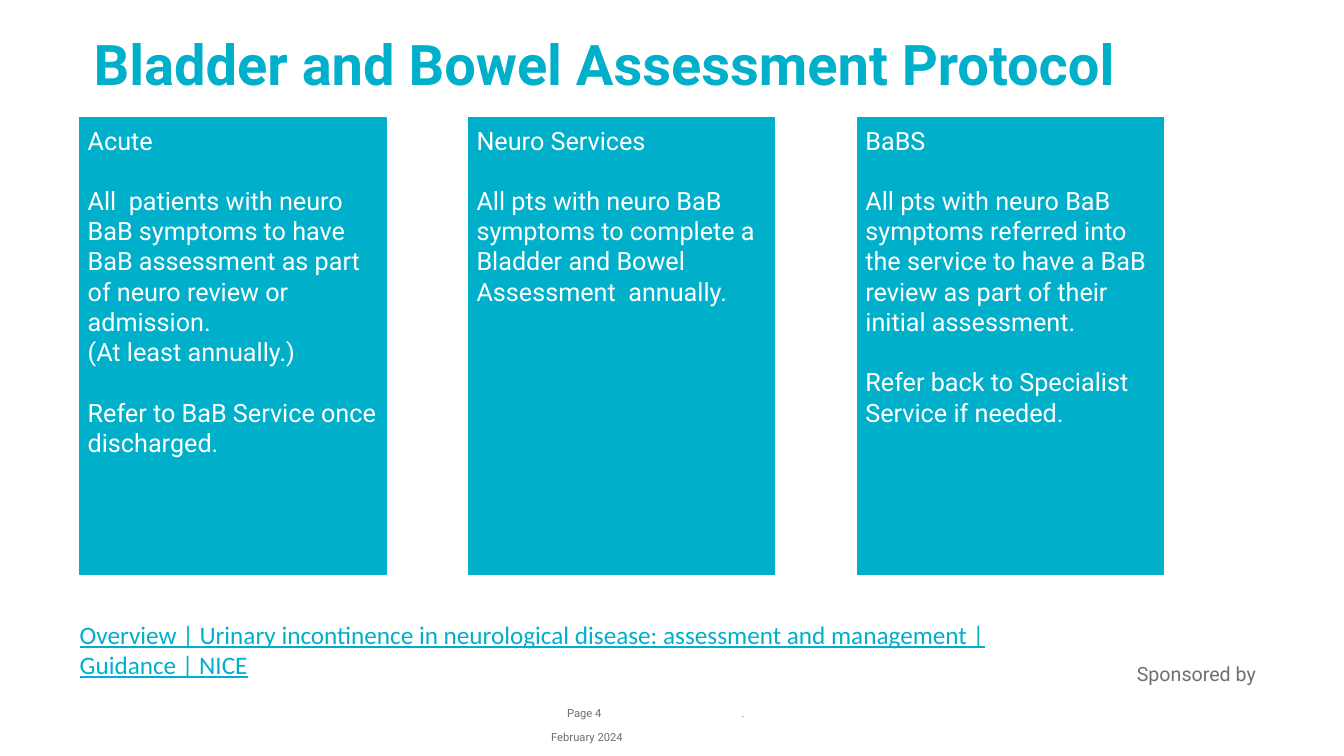
"""Build the Bladder and Bowel Assessment Protocol slide."""
from pptx import Presentation
from pptx.dml.color import RGBColor
from pptx.enum.shapes import MSO_SHAPE
from pptx.enum.text import MSO_ANCHOR, PP_ALIGN
from pptx.util import Cm, Pt

RECT = MSO_SHAPE.RECTANGLE
TOP, BOTTOM = MSO_ANCHOR.TOP, MSO_ANCHOR.BOTTOM
LEFT, CENTER, RIGHT = PP_ALIGN.LEFT, PP_ALIGN.CENTER, PP_ALIGN.RIGHT

COLORS = {"teal": "00B0CA", "grey": "6F6F6F", "white": "FFFFFF"}

TITLE = "Bladder and Bowel Assessment Protocol"
GUIDANCE = ("Overview | Urinary incontinence in neurological disease: "
            "assessment and management | Guidance | NICE")
SPONSOR = "Sponsored by"

# Each card is a list of blocks; a block is a list of paragraphs.
CARDS = [
    [["Acute"],
     ["All  patients with neuro BaB symptoms to have BaB assessment "
      "as part of neuro review or admission.",
      "(At least annually.)"],
     ["Refer to BaB Service once discharged."]],
    [["Neuro Services"],
     ["All pts with neuro BaB symptoms to complete a Bladder and Bowel "
      "Assessment  annually."]],
    [["BaBS"],
     ["All pts with neuro BaB symptoms referred into the service to have "
      "a BaB review as part of their initial assessment."],
     ["Refer back to Specialist Service if needed."]],
]

FOOTERS = [
    ("February 2024", 13.03, 18.16, 3.53, CENTER),
    (".", 18.69, 17.55, 7.09, LEFT),
    ("Page 4", 13.56, 17.55, 1.6, RIGHT),
]

MARGIN, CARD_TOP = 2.01, 2.95
CARD_W, CARD_H, CARD_PITCH = 7.72, 11.53, 9.8
CARD_INSET, FOOTER_H = 0.2, 0.58
BLOCK_GAP = Pt(21.5)


def rgb(name):
    return RGBColor.from_string(COLORS[name])


def set_frame(tf, inset, anchor, wrap):
    tf.margin_left = tf.margin_right = Cm(inset)
    tf.margin_top = tf.margin_bottom = Cm(inset)
    tf.vertical_anchor = anchor
    tf.word_wrap = wrap


def style(p, size, color, font="Roboto", align=LEFT):
    p.alignment = align
    for r in p.runs:
        r.font.name = font
        r.font.size = Pt(size)
        r.font.color.rgb = rgb(color)


def add_text(s, text, box, size, color, font="Roboto", align=LEFT,
             anchor=TOP, wrap=True):
    tf = s.shapes.add_textbox(*map(Cm, box)).text_frame
    set_frame(tf, 0, anchor, wrap)
    p = tf.paragraphs[0]
    p.text = text
    style(p, size, color, font, align)
    return p


def add_card(s, blocks, left):
    sp = s.shapes.add_shape(RECT, Cm(left), Cm(CARD_TOP), Cm(CARD_W), Cm(CARD_H))
    sp.shadow.inherit = False
    sp.fill.solid()
    sp.fill.fore_color.rgb = rgb("teal")
    sp.line.color.rgb = rgb("teal")
    sp.line.width = Pt(0.75)
    tf = sp.text_frame
    set_frame(tf, CARD_INSET, TOP, True)
    p = tf.paragraphs[0]
    for b, block in enumerate(blocks):
        for i, text in enumerate(block):
            if b or i:
                p = tf.add_paragraph()
            if b and not i:
                p.space_before = BLOCK_GAP
            p.text = text
            style(p, 18, "white")


def main():
    prs = Presentation()
    prs.slide_width, prs.slide_height = Cm(33.87), Cm(19.05)
    s = prs.slides.add_slide(prs.slide_layouts[6])

    p = add_text(s, TITLE, (2.36, 1.02, 29.49, 2.9), 40, "teal")
    p.line_spacing = 0.83
    p.runs[0].font.bold = True

    for text, left, top, width, align in FOOTERS:
        add_text(s, text, (left, top, width, FOOTER_H), 8, "grey",
                 align=align, anchor=BOTTOM)

    for i, blocks in enumerate(CARDS):
        add_card(s, blocks, MARGIN + i * CARD_PITCH)

    p = add_text(s, GUIDANCE, (MARGIN, 15.6, 25.32, 1.68), 18, "teal",
                 "Calibri", wrap=False)
    p.runs[0].font.underline = True
    add_text(s, SPONSOR, (28.65, 16.69, 3.2, 1.07), 14, "grey", wrap=False)

    prs.save("out.pptx")


if __name__ == "__main__":
    main()
